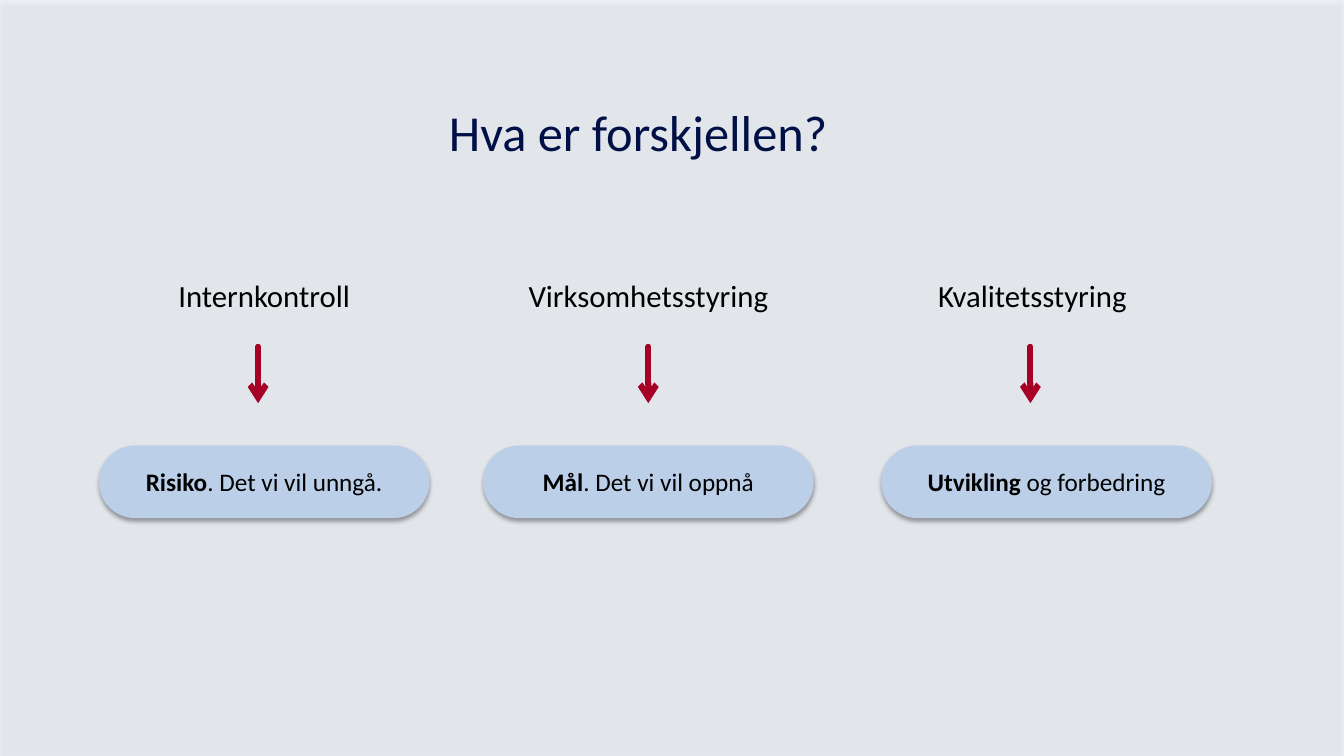
"""Build a slide that compares three kinds of management."""
from lxml import etree
from pptx import Presentation
from pptx.dml.color import RGBColor
from pptx.enum.shapes import MSO_CONNECTOR, MSO_SHAPE
from pptx.enum.text import MSO_ANCHOR, PP_ALIGN
from pptx.oxml.ns import qn
from pptx.util import Pt

PX = 9144
SLIDE_WIDTH, SLIDE_HEIGHT = 1333, 750
TITLE_ONLY = 5
FONT = "Calibri"
CENTER, MIDDLE, TOP = PP_ALIGN.CENTER, MSO_ANCHOR.MIDDLE, MSO_ANCHOR.TOP
RECTANGLE, ROUNDED = MSO_SHAPE.RECTANGLE, MSO_SHAPE.ROUNDED_RECTANGLE
STRAIGHT = MSO_CONNECTOR.STRAIGHT

BLACK = RGBColor(0x00, 0x00, 0x00)
NAVY = RGBColor(0x00, 0x10, 0x46)
RED = RGBColor(0xA7, 0x00, 0x26)
PALE_BLUE = RGBColor(0xBC, 0xCF, 0xE8)

HEADING_LEFT, HEADING_STEP = 131, 381
COLUMNS = [
    ("Internkontroll", 256, 98, "Risiko", ". Det vi vil unngå."),
    ("Virksomhetsstyring", 643, 479, "Mål", ". Det vi vil oppnå"),
    ("Kvalitetsstyring", 1022, 874, "Utvikling ", "og forbedring"),
]


def px(*lengths):
    return [length * PX for length in lengths]


def write(frame, text, size, color=BLACK, bold_text="", anchor=TOP):
    frame.word_wrap = True
    frame.vertical_anchor = anchor
    paragraph = frame.paragraphs[0]
    paragraph.alignment = CENTER
    for words, bold in ((bold_text, True), (text, False)):
        if words:
            run = paragraph.add_run()
            run.text = words
            run.font.name = FONT
            run.font.size = Pt(size)
            run.font.bold = bold
            run.font.color.rgb = color


def add_shadow(shape):
    shape.shadow.inherit = False
    effects = shape._element.spPr.find(qn("a:effectLst"))
    shadow = etree.SubElement(effects, qn("a:outerShdw"), blurRad="40000",
                              dist="23000", dir="5400000", rotWithShape="0")
    color = etree.SubElement(shadow, qn("a:srgbClr"), val=str(BLACK))
    etree.SubElement(color, qn("a:alpha"), val="35000")


def add_panel(slide, kind, left, top, width, height):
    shape = slide.shapes.add_shape(kind, *px(left, top, width, height))
    shape.fill.solid()
    shape.fill.fore_color.rgb = PALE_BLUE
    shape.line.fill.background()
    add_shadow(shape)
    return shape


def add_background(slide):
    panel = add_panel(slide, RECTANGLE, 0, 0, SLIDE_WIDTH, SLIDE_HEIGHT)
    color = panel._element.spPr.find(".//" + qn("a:srgbClr"))
    etree.SubElement(color, qn("a:alpha"), val="21000")
    slide.shapes._spTree.insert(2, panel._element)


def add_title(slide, text):
    title = slide.shapes.title
    title.left, title.top, title.width, title.height = px(341, 66, 584, 128)
    write(title.text_frame, text, 36, color=NAVY, anchor=MIDDLE)


def add_heading(slide, text, left):
    box = slide.shapes.add_textbox(*px(left, 270, 262, 47))
    write(box.text_frame, text, 22)


def add_arrow(slide, x):
    arrow = slide.shapes.add_connector(STRAIGHT, *px(x, 344, x, 400))
    arrow.line.color.rgb = RED
    arrow.line.width = Pt(4.25)
    line = arrow.line._get_or_add_ln()
    line.set("cap", "rnd")
    etree.SubElement(line, qn("a:tailEnd"), type="arrow")
    etree.SubElement(arrow._element.spPr, qn("a:effectLst"))


def add_pill(slide, left, bold_text, text):
    pill = add_panel(slide, ROUNDED, left, 442, 328, 72)
    pill.adjustments[0] = 0.5
    write(pill.text_frame, text, 18, bold_text=bold_text, anchor=MIDDLE)


def main():
    presentation = Presentation()
    presentation.slide_width, presentation.slide_height = px(SLIDE_WIDTH, SLIDE_HEIGHT)
    slide = presentation.slides.add_slide(presentation.slide_layouts[TITLE_ONLY])
    add_background(slide)
    add_title(slide, "Hva er forskjellen?")
    for index, (heading, arrow_x, pill_left, bold_text, text) in enumerate(COLUMNS):
        add_heading(slide, heading, HEADING_LEFT + index * HEADING_STEP)
        add_arrow(slide, arrow_x)
        add_pill(slide, pill_left, bold_text, text)
    presentation.save("out.pptx")


if __name__ == "__main__":
    main()
